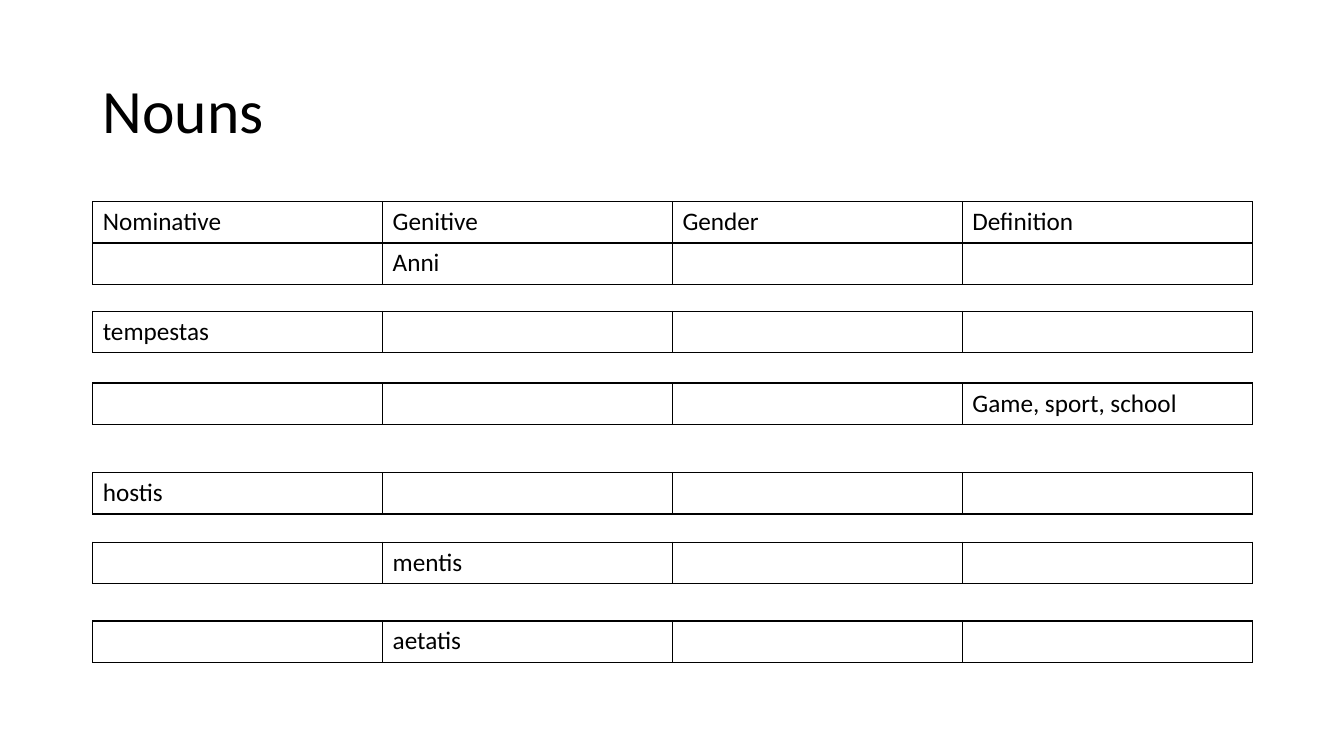
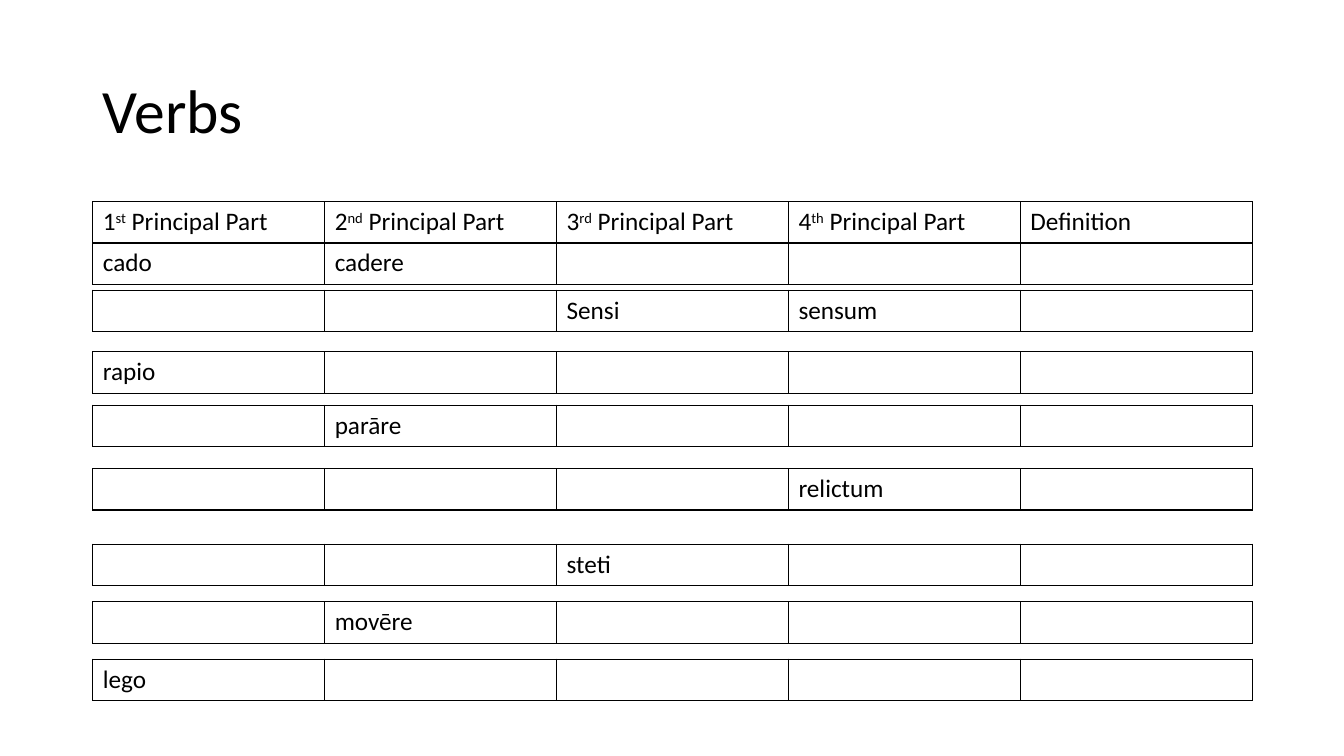
from lxml.etree import SubElement
from pptx import Presentation
from pptx.dml.color import RGBColor
from pptx.enum.text import MSO_ANCHOR
from pptx.oxml.ns import qn
from pptx.util import Inches, Pt

BLACK = RGBColor(0, 0, 0)
FONT = "Calibri"
LEFT, WIDTH, ROW = 0.92, 11.5, 0.41

NOUNS = [
    (2, [["Nominative", "Genitive", "Gender", "Definition"],
         ["", "Anni", "", ""]]),
    (3.09, [["tempestas", "", "", ""]]),
    (3.8, [["", "", "", "Game, sport, school"]]),
    (4.69, [["hostis", "", "", ""]]),
    (5.38, [["", "mentis", "", ""]]),
    (6.16, [["", "aetatis", "", ""]]),
]
PARTS = [f"{rank} Principal Part" for rank in ("1^st^", "2^nd^", "3^rd^", "4^th^")]
VERBS = [
    (2, [PARTS + ["Definition"],
         ["cado", "cadere", "", "", ""]]),
    (2.88, [["", "", "Sensi", "sensum", ""]]),
    (3.49, [["rapio", "", "", "", ""]]),
    (4.02, [["", "parāre", "", "", ""]]),
    (4.65, [["", "", "", "relictum", ""]]),
    (5.4, [["", "", "steti", "", ""]]),
    (5.97, [["", "movēre", "", "", ""]]),
    (6.54, [["lego", "", "", "", ""]]),
]


def write(frame, text, size=18, color=BLACK, spacing=None):
    """Fill a frame; text between carets is set as superscript."""
    para = frame.paragraphs[0]
    if spacing:
        para.line_spacing = spacing
    for i, piece in enumerate(text.split("^")):
        if not piece:
            continue
        run = para.add_run()
        run.text = piece
        run.font.name = FONT
        run.font.size = Pt(size)
        run.font.color.rgb = color
        if i % 2:
            run.font._element.set("baseline", "30000")


def frame_cell(cell, color=BLACK, width=1):
    """Draw all four borders and leave the cell unfilled."""
    props = cell._tc.get_or_add_tcPr()
    for side in ("lnL", "lnR", "lnT", "lnB"):
        line = SubElement(props, qn(f"a:{side}"), w=str(Pt(width)))
        fill = SubElement(line, qn("a:solidFill"))
        SubElement(fill, qn("a:srgbClr"), val=str(color))
    cell.fill.background()


class Deck:
    """Holds the presentation, its shared style and the current slide."""

    def __init__(self):
        self.prs = Presentation()
        self.prs.slide_width = Inches(13.33)
        self.prs.slide_height = Inches(7.5)
        self.slide = None

    def start(self, title):
        self.slide = self.prs.slides.add_slide(self.prs.slide_layouts[6])
        box = self.slide.shapes.add_textbox(
            Inches(LEFT), Inches(0.4), Inches(WIDTH), Inches(1.45))
        frame = box.text_frame
        frame.word_wrap = True
        frame.vertical_anchor = MSO_ANCHOR.MIDDLE
        write(frame, title, size=44, spacing=0.9)

    def table(self, top, rows):
        count = len(rows[0])
        table = self.slide.shapes.add_table(
            len(rows), count, Inches(LEFT), Inches(top),
            Inches(WIDTH), Inches(ROW * len(rows))).table
        table.first_row = table.horz_banding = False
        for col in table.columns:
            col.width = Inches(WIDTH / count)
        for r, row in enumerate(rows):
            for c, text in enumerate(row):
                cell = table.cell(r, c)
                frame_cell(cell)
                write(cell.text_frame, text)


def main():
    deck = Deck()
    for title, tables in (("Nouns", NOUNS), ("Verbs", VERBS)):
        deck.start(title)
        for top, rows in tables:
            deck.table(top, rows)
    deck.prs.save("out.pptx")


if __name__ == "__main__":
    main()
